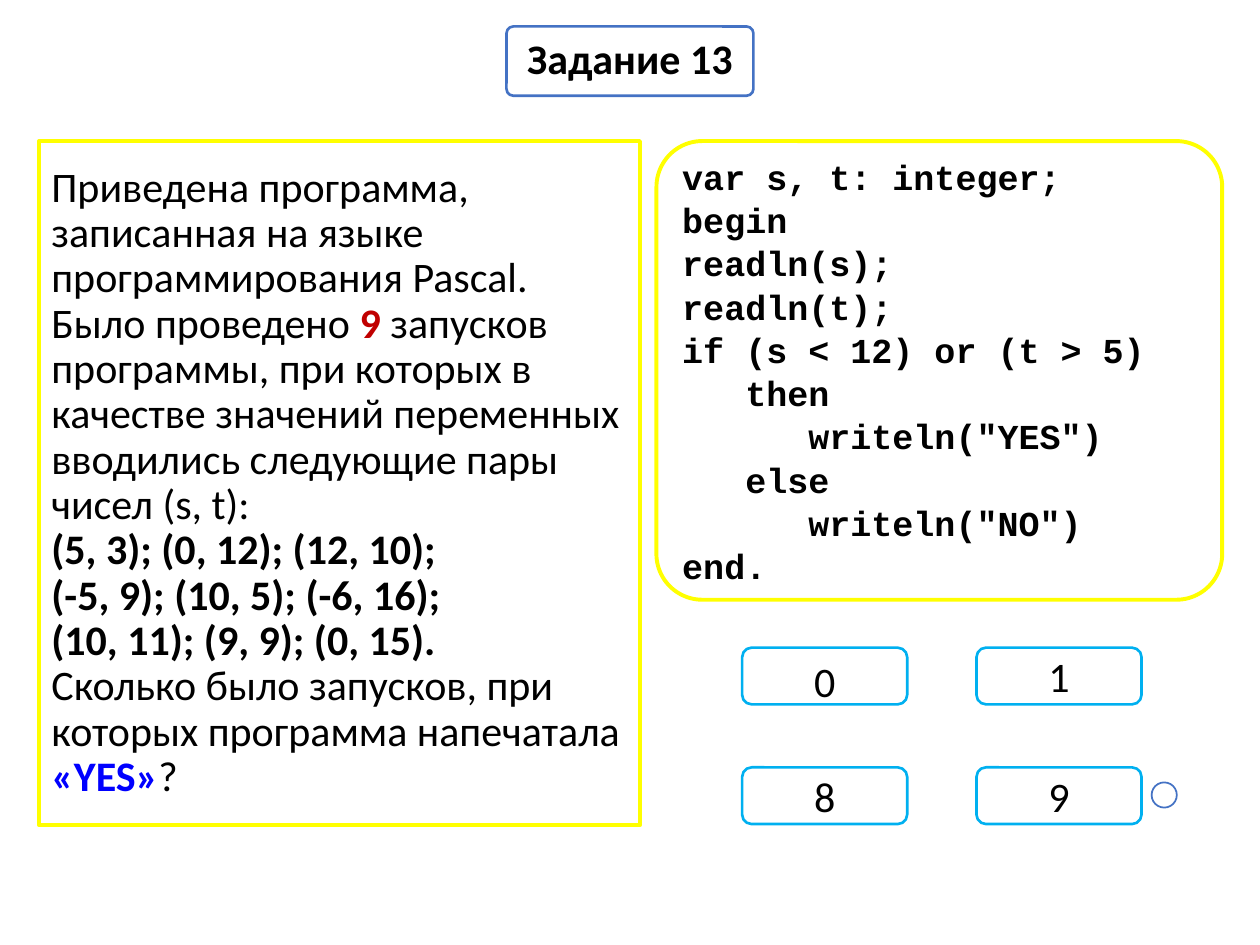
import pptx
import pptx.util
import pptx.dml.color
import pptx.enum.shapes
import pptx.enum.text

Inches = pptx.util.Inches
Pt = pptx.util.Pt
Shapes = pptx.enum.shapes.MSO_SHAPE
Align = pptx.enum.text.PP_ALIGN

COLORS = {"white": "FFFFFF", "black": "000000", "blue": "4472C4", "yellow": "FFFF00",
          "cyan": "00B0F0", "red": "C00000", "answer": "0000FF"}

TITLE = [("Задание 13", "black", True)]
TASK = [
    ("Приведена программа, записанная на языке программирования Pascal.\nБыло проведено ", "black", False),
    ("9", "red", True),
    (" запусков программы, при которых в качестве значений переменных "
     "вводились следующие пары чисел (s, t):\n", "black", False),
    ("(5, 3); (0, 12); (12, 10);\n(-5, 9); (10, 5); (-6, 16);\n(10, 11); (9, 9); (0, 15).\n", "black", True),
    ("Сколько было запусков, при которых программа напечатала ", "black", False),
    ("«YES»", "answer", True),
    ("?", "black", False),
]
CODE = [("""var s, t: integer;
begin
readln(s);
readln(t);
if (s < 12) or (t > 5)
   then
      writeln("YES")
   else
      writeln("NO")
end.""", "black", True)]
ANSWERS = [("0", 1.2), ("1", 1.0), ("8", 1.0), ("9", 1.0)]


def rgb(name):
    return pptx.dml.color.RGBColor.from_string(COLORS[name])


def add_box(slide, kind, place, line_color, line_width, corner=None):
    box = slide.shapes.add_shape(kind, *[Inches(length) for length in place])
    box.shadow.inherit = False
    box.fill.solid()
    box.fill.fore_color.rgb = rgb("white")
    box.line.color.rgb = rgb(line_color)
    box.line.width = Pt(line_width)
    if corner is not None:
        box.adjustments[0] = corner
    return box


def write(box, spans, align, spacing=1.0, size=24, font="Calibri"):
    frame = box.text_frame
    frame.word_wrap = True
    frame.vertical_anchor = pptx.enum.text.MSO_ANCHOR.MIDDLE
    para = frame.paragraphs[0]
    para.alignment = align
    para.line_spacing = spacing
    para.font.size = Pt(size)
    para.font.name = font
    for text, color, bold in spans:
        for index, line in enumerate(text.split("\n")):
            if index:
                para.add_line_break()
            if line:
                span = para.add_run()
                span.text = line
                span.font.bold = bold
                span.font.color.rgb = rgb(color)


def main():
    deck = pptx.Presentation()
    deck.slide_width, deck.slide_height = Inches(10), Inches(7.5)
    slide = deck.slides.add_slide(deck.slide_layouts[6])

    title = add_box(slide, Shapes.ROUNDED_RECTANGLE, (4.02, 0.21, 1.96, 0.55), "blue", 1.5, 0.1)
    write(title, TITLE, Align.CENTER, 0.9)

    task = add_box(slide, Shapes.RECTANGLE, (0.31, 1.12, 4.77, 5.43), "yellow", 2.25)
    write(task, TASK, Align.LEFT, 0.9)

    code = add_box(slide, Shapes.ROUNDED_RECTANGLE, (5.21, 1.12, 4.49, 3.64), "yellow", 2.25, 0.1)
    write(code, CODE, Align.LEFT, 1.03, 20, "Courier New")

    for index, (answer, spacing) in enumerate(ANSWERS):
        row, column = divmod(index, 2)
        place = (5.89 + column * 1.86, 5.14 + row * 0.95, 1.31, 0.45)
        box = add_box(slide, Shapes.ROUNDED_RECTANGLE, place, "cyan", 1.5)
        write(box, [(answer, "black", False)], Align.CENTER, spacing)

    add_box(slide, Shapes.OVAL, (9.14, 6.21, 0.2, 0.2), "blue", 1)
    deck.save("out.pptx")


if __name__ == "__main__":
    main()
